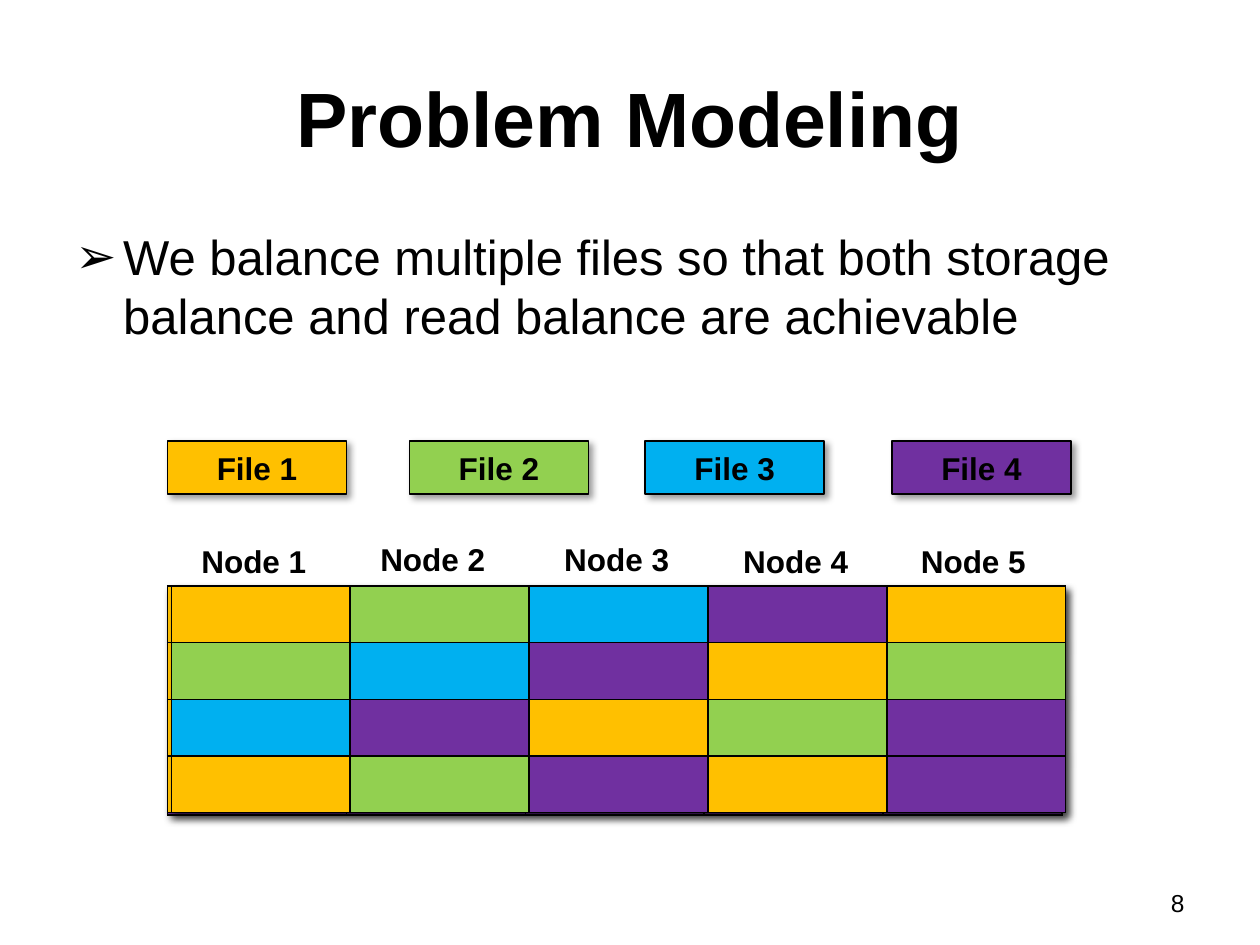
import pptx
import pptx.util
import pptx.dml.color
import pptx.enum.shapes
import pptx.enum.text
import pptx.oxml
import pptx.oxml.ns

Inches, Pt = pptx.util.Inches, pptx.util.Pt
RGB = pptx.dml.color.RGBColor.from_string
ALIGN = pptx.enum.text.PP_ALIGN
MIDDLE = pptx.enum.text.MSO_ANCHOR.MIDDLE
NS = pptx.oxml.ns.nsdecls("a")

COLORS = {"text": "000000", "1": "FFC000", "2": "92D050", "3": "00B0F0", "4": "7030A0"}
COL, ROW = 1.42, 0.45
LEFT = 1.33
SHADOW = (
    f'<a:effectLst {NS}><a:outerShdw blurRad="50800" dist="38100" dir="2700000" '
    'algn="tl" rotWithShape="0"><a:srgbClr val="000000"><a:alpha val="40000"/>'
    "</a:srgbClr></a:outerShdw></a:effectLst>"
)


def write(shape, text, size, bold=False, align=ALIGN.LEFT):
    tf = shape.text_frame
    tf.word_wrap = True
    p = tf.paragraphs[0]
    p.alignment = align
    r = p.add_run()
    r.text = text
    r.font.name, r.font.size, r.font.bold = "Arial", Pt(size), bold
    r.font.color.rgb = RGB(COLORS["text"])
    return p


def add_block_table(left, top, rows):
    """Draw a table whose rows are strings of file numbers, one per cell."""
    frame = s.shapes.add_table(len(rows), len(rows[0]), Inches(left), Inches(top),
                               Inches(COL * len(rows[0])), Inches(ROW * len(rows)))
    table = frame.table
    table._tbl.tblPr.insert(0, pptx.oxml.parse_xml(SHADOW))
    for col in table.columns:
        col.width = Inches(COL)
    for i, row in enumerate(rows):
        table.rows[i].height = Inches(ROW)
        for j, file in enumerate(row):
            cell = table.cell(i, j)
            tcPr = cell._tc.get_or_add_tcPr()
            for side in "LRTB":
                tcPr.append(pptx.oxml.parse_xml(
                    f'<a:ln{side} {NS} w="12700"><a:solidFill><a:srgbClr '
                    f'val="{COLORS["text"]}"/></a:solidFill></a:ln{side}>'))
            cell.fill.solid()
            cell.fill.fore_color.rgb = RGB(COLORS[file])


prs = pptx.Presentation()
prs.slide_width, prs.slide_height = Inches(10), Inches(7.5)
s = prs.slides.add_slide(prs.slide_layouts[5])

title = s.shapes.title
title.left, title.top, title.width, title.height = map(Inches, (0.5, 0.3, 9, 1.25))
title.text_frame.vertical_anchor = MIDDLE
write(title, "Problem Modeling", 44, True, ALIGN.CENTER)

body = s.shapes.add_textbox(Inches(0.5), Inches(1.75), Inches(9), Inches(4.95))
p = write(body, "We balance multiple files so that both storage balance "
          "and read balance are achievable", 28)
pPr = p._p.get_or_add_pPr()
pPr.set("marL", str(Inches(0.38)))
pPr.set("indent", str(-Inches(0.38)))
pPr.append(pptx.oxml.parse_xml(f'<a:buFont {NS} typeface="Arial"/>'))
pPr.append(pptx.oxml.parse_xml(f'<a:buChar {NS} char="➢"/>'))

number = s.shapes.add_textbox(Inches(7.17), Inches(7), Inches(2.33), Inches(0.35))
write(number, "8", 14, align=ALIGN.RIGHT)

# Two earlier placements lie under the final one and show at its edges
add_block_table(LEFT, 4.67, ["11111", "12222", "23334", "44444"])

for file, left in enumerate((LEFT, 3.25, 5.12, 7.08), 1):
    sp = s.shapes.add_shape(pptx.enum.shapes.MSO_SHAPE.RECTANGLE,
                            Inches(left), Inches(3.5), Inches(COL), Inches(0.42))
    sp.fill.solid()
    sp.fill.fore_color.rgb = RGB(COLORS[str(file)])
    sp.line.color.rgb = RGB(COLORS["text"])
    sp.line.width = Pt(0.75)
    sp._element.spPr.append(pptx.oxml.parse_xml(SHADOW))
    sp.text_frame.vertical_anchor = MIDDLE
    write(sp, f"File {file}", 18, True, ALIGN.CENTER)

for node, left in enumerate((LEFT, 2.75, 4.21, 5.63, 7.04), 1):
    top = 4.24 if node in (2, 3) else 4.25
    label = s.shapes.add_textbox(Inches(left), Inches(top), Inches(1.37), Inches(0.4))
    write(label, f"Node {node}", 18, True, ALIGN.CENTER)

add_block_table(LEFT, 4.65, ["11234", "11234", "12244", "12344"])
add_block_table(LEFT + 0.03, 4.65, ["12341", "23412", "34124", "12414"])

prs.save("out.pptx")
